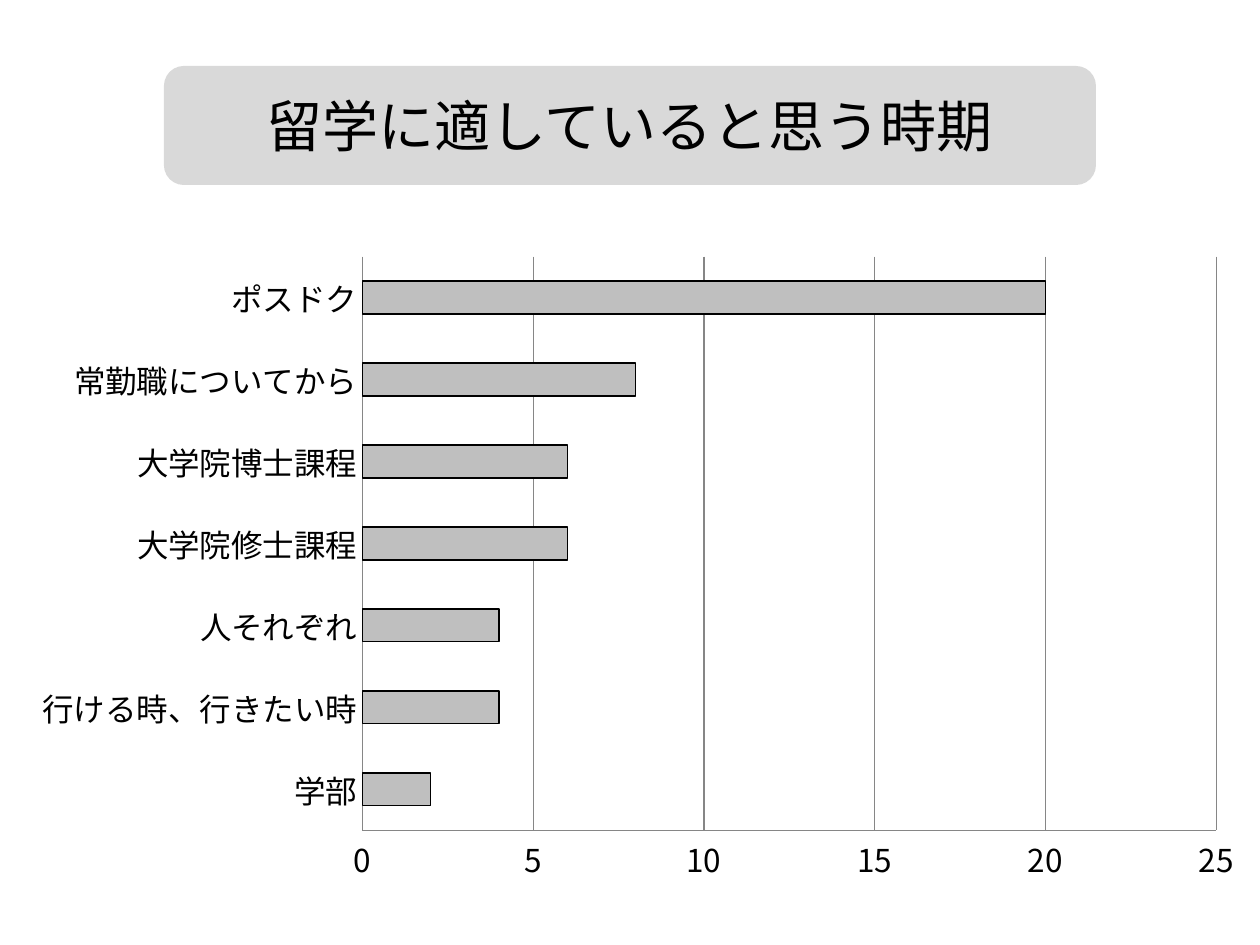
from lxml.etree import SubElement
from pptx import Presentation
from pptx.chart.data import CategoryChartData
from pptx.dml.color import RGBColor
from pptx.enum.chart import XL_CHART_TYPE, XL_TICK_MARK
from pptx.enum.shapes import MSO_SHAPE
from pptx.enum.text import MSO_ANCHOR, PP_ALIGN
from pptx.oxml import parse_xml
from pptx.oxml.ns import nsdecls, qn
from pptx.util import Emu, Pt

BLACK = RGBColor(0x00, 0x00, 0x00)
TITLE_GRAY = RGBColor(0xD9, 0xD9, 0xD9)
BAR_GRAY = RGBColor(0xBF, 0xBF, 0xBF)
GRID_GRAY = RGBColor(0x86, 0x86, 0x86)

PX_PER_INCH = 126
SLIDE_W, SLIDE_H = 1260, 945

TIMINGS = [
    ("学部", 2),
    ("行ける時、行きたい時", 4),
    ("人それぞれ", 4),
    ("大学院修士課程", 6),
    ("大学院博士課程", 6),
    ("常勤職についてから", 8),
    ("ポスドク", 20),
]


def px(n):
    return Emu(round(n * 914400 / PX_PER_INCH))


class SlideBuilder:
    font = "Noto Sans CJK JP"

    def __init__(self, slide):
        self.s = slide

    def style_font(self, font, rPr, size):
        font.name = self.font
        font.size = Pt(size)
        font.color.rgb = BLACK
        SubElement(rPr, qn("a:ea")).set("typeface", self.font)

    def title_box(self, text, x, y, w, h, size):
        sp = self.s.shapes.add_shape(
            MSO_SHAPE.ROUNDED_RECTANGLE, px(x), px(y), px(w), px(h))
        sp.shadow.inherit = False
        sp.fill.solid()
        sp.fill.fore_color.rgb = TITLE_GRAY
        sp.line.fill.background()
        tf = sp.text_frame
        tf.word_wrap = True
        tf.vertical_anchor = MSO_ANCHOR.MIDDLE
        p = tf.paragraphs[0]
        p.alignment = PP_ALIGN.CENTER
        r = p.add_run()
        r.text = text
        self.style_font(r.font, r._r.get_or_add_rPr(), size)

    def bar_chart(self, rows, x, y, w, h, size, plot_box):
        data = CategoryChartData()
        data.categories = [name for name, _ in rows]
        data.add_series("Series 1", [value for _, value in rows])
        chart = self.s.shapes.add_chart(
            XL_CHART_TYPE.BAR_CLUSTERED, px(x), px(y), px(w), px(h), data).chart
        chart.has_legend = False
        chart.has_title = False
        font = chart.font
        rPr = next(chart._chartSpace.iter(qn("a:defRPr")))
        self.style_font(font, rPr, size)

        # Bars
        plot = chart.plots[0]
        plot.gap_width = 150
        plot.vary_by_categories = False
        fmt = plot.series[0].format
        fmt.fill.solid()
        fmt.fill.fore_color.rgb = BAR_GRAY
        fmt.line.color.rgb = BLACK
        fmt.line.width = Pt(0.75)

        # Axes and gridlines
        axis = chart.value_axis
        axis.minimum_scale, axis.maximum_scale, axis.major_unit = 0, 25, 5
        axis.has_major_gridlines = True
        lines = [axis.major_gridlines.format.line]
        for ax in (chart.category_axis, axis):
            ax.major_tick_mark = ax.minor_tick_mark = XL_TICK_MARK.NONE
            lines.append(ax.format.line)
        for line in lines:
            line.color.rgb = GRID_GRAY
            line.width = Pt(0.75)

        self.place_plot(chart, plot_box)

    def place_plot(self, chart, box):
        area = chart._chartSpace.chart.plotArea
        for old in area.findall(qn("c:layout")):
            area.remove(old)
        modes = "".join(f'<c:{k}Mode val="edge"/>' for k in "xy")
        sizes = "".join(f'<c:{k} val="{v}"/>' for k, v in zip("xywh", box))
        area.insert(0, parse_xml(
            f'<c:layout {nsdecls("c")}><c:manualLayout>'
            f'<c:layoutTarget val="inner"/>{modes}{sizes}'
            '</c:manualLayout></c:layout>'))


def main():
    prs = Presentation()
    prs.slide_width, prs.slide_height = px(SLIDE_W), px(SLIDE_H)
    b = SlideBuilder(prs.slides.add_slide(prs.slide_layouts[6]))

    # Title
    b.title_box("留学に適していると思う時期", 164, 66, 932, 119, 32)

    # Survey answers
    b.bar_chart(TIMINGS, 15, 234, 1250, 665, 18, (0.278, 0.034, 0.683, 0.863))

    prs.save("out.pptx")


if __name__ == "__main__":
    main()
